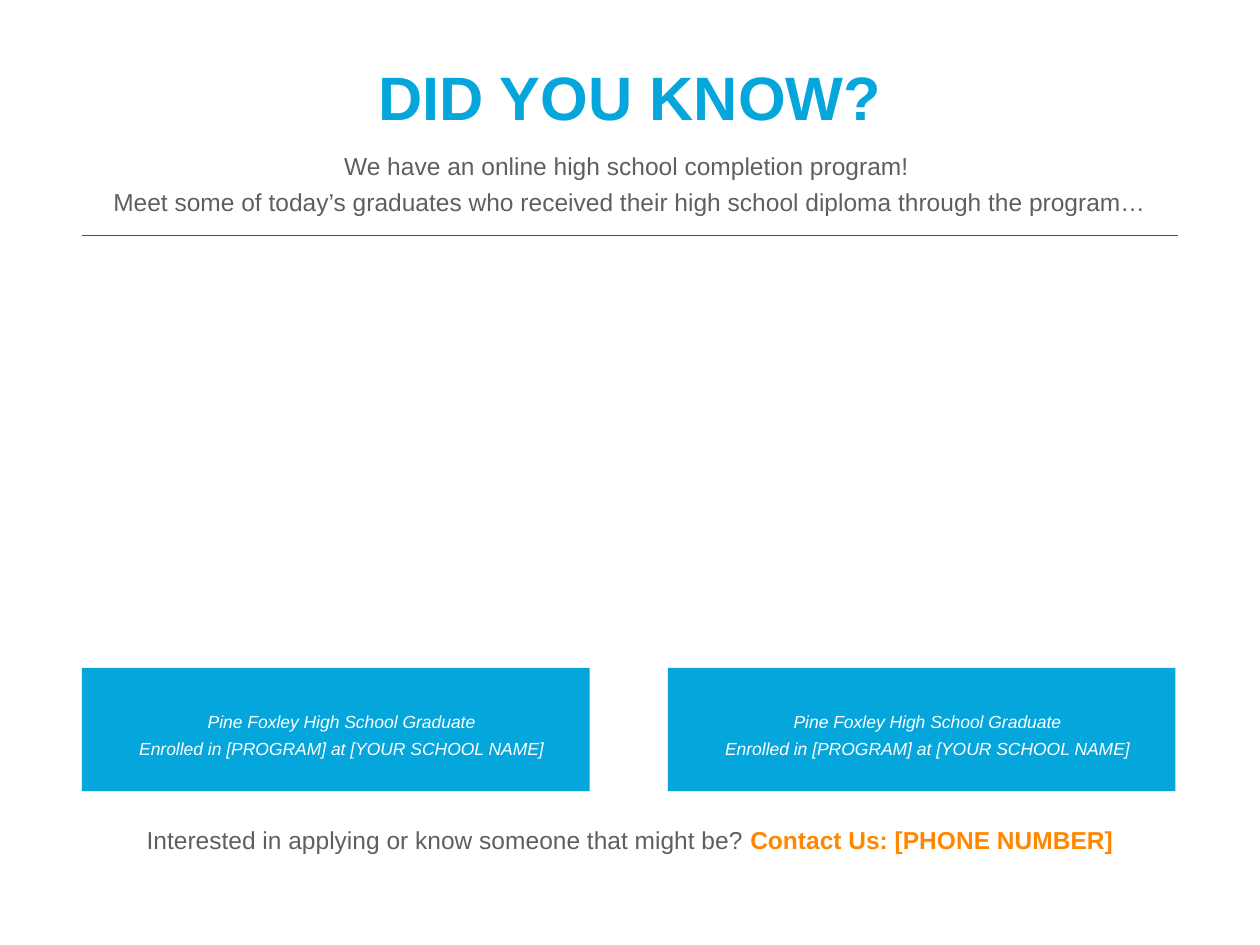
from lxml import etree
from pptx import Presentation
from pptx.dml.color import RGBColor
from pptx.enum.shapes import MSO_CONNECTOR, MSO_SHAPE
from pptx.enum.text import MSO_ANCHOR, MSO_AUTO_SIZE, PP_ALIGN
from pptx.oxml.ns import qn
from pptx.util import Inches, Pt

STRAIGHT = MSO_CONNECTOR.STRAIGHT
RECTANGLE = MSO_SHAPE.RECTANGLE
TOP, MIDDLE = MSO_ANCHOR.TOP, MSO_ANCHOR.MIDDLE
CENTER = PP_ALIGN.CENTER
NO_AUTOFIT = MSO_AUTO_SIZE.NONE

BLUE, GRAY, DARK_GRAY, ORANGE, WHITE = "05A6DC", "5F5F5F", "4D4D4D", "FF8700", "FFFFFF"
LEFT, WIDTH = 0.65, 8.7
CARD_TOP, CARD_WIDTH, CARD_HEIGHT = 5.3, 4.03, 0.98
CARD_LEFTS = (LEFT, 5.3)


def color(value):
    return RGBColor.from_string(value)


def place(shape, left, top, width, height):
    shape.left, shape.top = Inches(left), Inches(top)
    shape.width, shape.height = Inches(width), Inches(height)


def write_text(shape, lines, size, anchor=MIDDLE, spacing=1.0):
    """Each line is a list of (text, color, bold, italic) runs."""
    frame = shape.text_frame
    frame.word_wrap = True
    frame.auto_size = NO_AUTOFIT
    frame.vertical_anchor = anchor
    frame.margin_left = frame.margin_right = frame.margin_top = frame.margin_bottom = 0
    for index, runs in enumerate(lines):
        paragraph = frame.paragraphs[0] if index == 0 else frame.add_paragraph()
        properties = paragraph._p.get_or_add_pPr()
        properties.set("marL", "0")
        properties.set("indent", "0")
        etree.SubElement(properties, qn("a:buNone"))
        paragraph.alignment = CENTER
        paragraph.line_spacing = spacing
        paragraph.space_before = Pt(0)
        for text, text_color, bold, italic in runs:
            run = paragraph.add_run()
            run.text = text
            font = run.font
            font.name, font.size = "Arial", Pt(size)
            font.bold, font.italic = bold, italic
            font.color.rgb = color(text_color)


def add_rule(slide, top):
    line = slide.shapes.add_connector(
        STRAIGHT, Inches(LEFT), Inches(top), Inches(LEFT + WIDTH), Inches(top))
    line.line.color.rgb = color(DARK_GRAY)
    line.line.width = Pt(1)
    etree.SubElement(line._element.spPr, qn("a:effectLst"))


def add_blue_box(group, left, top, width, height):
    box = group.shapes.add_shape(
        RECTANGLE, Inches(left), Inches(top), Inches(width), Inches(height))
    box.shadow.inherit = False
    box.fill.solid()
    box.fill.fore_color.rgb = color(BLUE)
    box.line.fill.background()
    return box


def add_graduate_card(slide, left):
    group = slide.shapes.add_group_shape()
    add_blue_box(group, left, CARD_TOP, CARD_WIDTH, CARD_HEIGHT)
    caption = add_blue_box(group, left + 0.31, CARD_TOP + 0.29, 3.5, 0.41)
    lines = ("Pine Foxley High School Graduate",
             "Enrolled in [PROGRAM] at [YOUR SCHOOL NAME]")
    write_text(caption, [[(line, WHITE, False, True)] for line in lines],
               10, anchor=TOP, spacing=1.3)


def main():
    presentation = Presentation()
    presentation.slide_width, presentation.slide_height = Inches(10), Inches(7.5)
    slide = presentation.slides.add_slide(presentation.slide_layouts[1])

    # Heading and introduction
    add_rule(slide, 1.87)
    title, introduction = slide.placeholders
    place(title, LEFT, 0.46, WIDTH, 0.61)
    write_text(title, [[("DID YOU KNOW?", BLUE, True, False)]], 35)
    place(introduction, LEFT, 1.23, WIDTH, 0.41)
    lines = ("We have an online high school completion program! ",
             "Meet some of today’s graduates who received their high school "
             "diploma through the program…")
    write_text(introduction, [[(line, GRAY, False, False)] for line in lines],
               14, spacing=1.2)

    # Graduate cards
    for left in CARD_LEFTS:
        add_graduate_card(slide, left)

    # Contact line
    contact = slide.shapes.add_textbox(
        Inches(LEFT), Inches(6.46), Inches(WIDTH), Inches(0.41))
    write_text(contact, [[
        ("Interested in applying or know someone that might be? ", GRAY, False, False),
        ("Contact Us: [PHONE NUMBER]", ORANGE, True, False),
    ]], 14)

    presentation.save("out.pptx")


if __name__ == "__main__":
    main()
